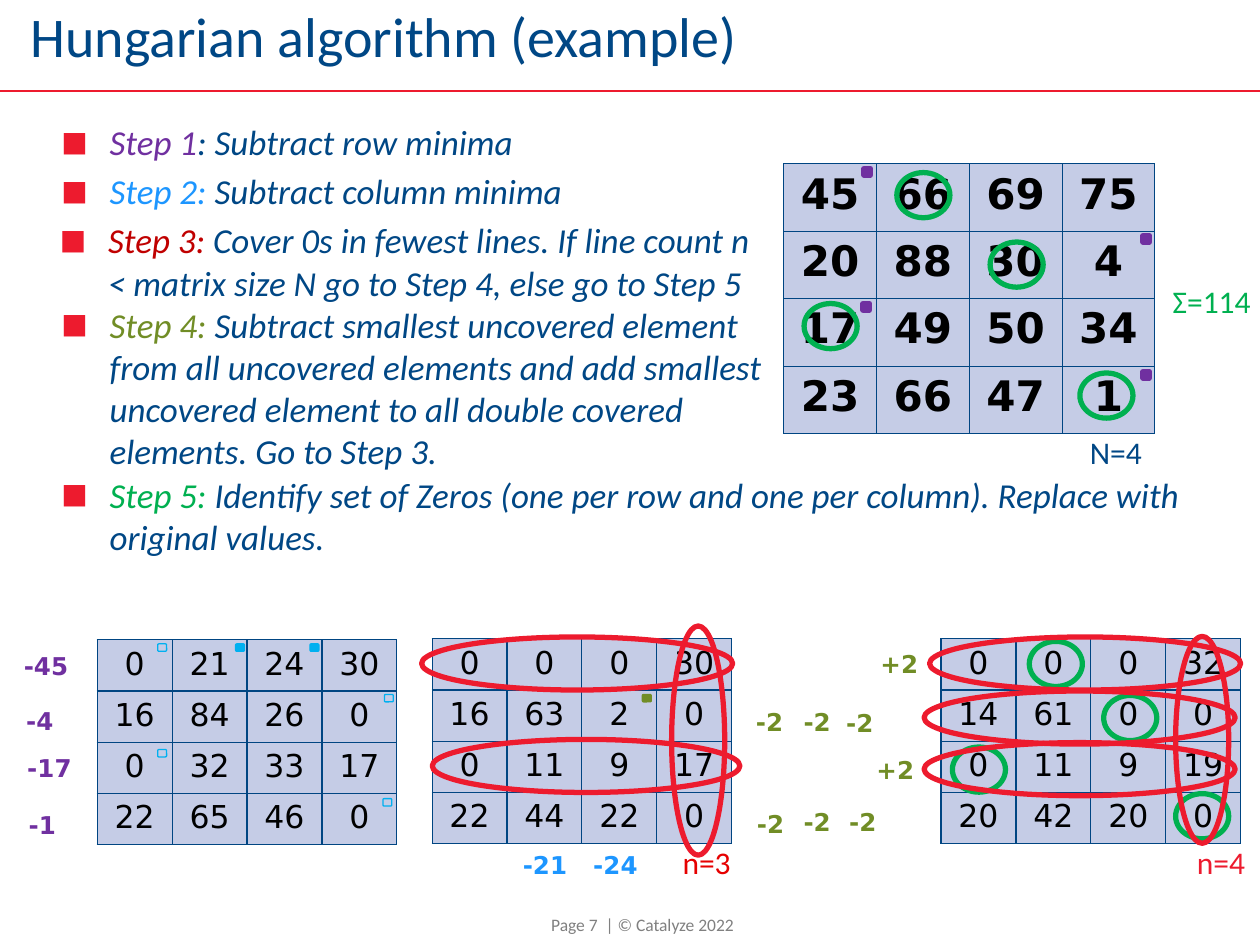
from lxml import etree
from pptx import Presentation
from pptx import util as u
from pptx.dml.color import RGBColor
from pptx.enum import shapes, text
from pptx.oxml import parse_xml
from pptx.oxml.ns import nsdecls, qn

NAVY, RED, GREEN, OLIVE = "004785", "ED1B2E", "00B050", "718D26"
PURPLE, BLUE, CYAN = "7030A0", "1D96FF", "00B0F0"
BORDER, CELL_FILL = "004582", "C5CCE6"


def color(value):
    return RGBColor.from_string(value)


class Board:
    """Style and drawing methods for the current slide."""
    body_font, number_font = "Calibri", "DejaVu Sans"

    def __init__(self, slide):
        self.slide = slide

    def run(self, paragraph, words, size, hue, font=None, bold=False, italic=False):
        run = paragraph.add_run()
        run.text = words
        run.font.name = font or self.body_font
        run.font.size = u.Pt(size)
        run.font.bold, run.font.italic = bold, italic
        run.font.color.rgb = color(hue)

    def title(self, words, x, y, w, h):
        title = self.slide.shapes.title
        title.left, title.top, title.width, title.height = map(u.Cm, (x, y, w, h))
        frame = title.text_frame
        frame.auto_size = text.MSO_AUTO_SIZE.NONE
        frame.vertical_anchor = text.MSO_ANCHOR.BOTTOM
        frame.paragraphs[0].alignment = text.PP_ALIGN.LEFT
        self.run(frame.paragraphs[0], words, 32, NAVY)

    def box(self, x, y, w, h, wrap=True):
        frame = self.slide.shapes.add_textbox(*map(u.Cm, (x, y, w, h))).text_frame
        frame.word_wrap = wrap
        return frame

    def note(self, words, x, y, w, h, hue, size=18, align=text.PP_ALIGN.LEFT):
        paragraph = self.box(x, y, w, h).paragraphs[0]
        paragraph.alignment = align
        self.run(paragraph, words, size, hue)

    def change(self, words, x, y, hue):
        frame = self.box(x, y, 1.4, 1.04, wrap=False)
        frame.vertical_anchor = text.MSO_ANCHOR.MIDDLE
        self.run(frame.paragraphs[0], words, 14, hue, self.number_font, bold=True)

    def step(self, name, words, hue, x, y, w, h):
        paragraph = self.box(x, y, w, h).paragraphs[0]
        props = paragraph._p.get_or_add_pPr()
        props.set("marL", str(u.Cm(1.96)))
        props.set("indent", str(u.Cm(-0.97)))
        bullet = etree.SubElement(props, qn("a:buClr"))
        etree.SubElement(bullet, qn("a:srgbClr"), val=RED)
        etree.SubElement(props, qn("a:buSzPct"), val="80000")
        etree.SubElement(props, qn("a:buFont"), typeface=self.body_font)
        etree.SubElement(props, qn("a:buChar"), char="■")
        self.run(paragraph, name, 20, hue, italic=True)
        self.run(paragraph, words, 20, NAVY, italic=True)

    def matrix(self, rows, x, y, col, row, size, bold=False):
        count = len(rows)
        table = self.slide.shapes.add_table(
            count, count, u.Cm(x), u.Cm(y), u.Cm(col * count), u.Cm(row * count)).table
        for i, values in enumerate(rows):
            table.rows[i].height = u.Cm(row)
            table.columns[i].width = u.Cm(col)
            for j, value in enumerate(values):
                cell = table.cell(i, j)
                self.border(cell)
                cell.fill.solid()
                cell.fill.fore_color.rgb = color(CELL_FILL)
                paragraph = cell.text_frame.paragraphs[0]
                paragraph.alignment = text.PP_ALIGN.CENTER
                self.run(paragraph, str(value), size, "000000", self.number_font, bold)

    def border(self, cell):
        props = cell._tc.get_or_add_tcPr()
        for side in ("lnL", "lnR", "lnT", "lnB"):
            props.append(parse_xml(
                f'<a:{side} {nsdecls("a")} w="{u.Pt(0.75)}"><a:solidFill>'
                f'<a:srgbClr val="{BORDER}"/></a:solidFill></a:{side}>'))

    def shape(self, kind, x, y, w, h, hue, weight, filled=False):
        shape = self.slide.shapes.add_shape(kind, *map(u.Cm, (x, y, w, h)))
        shape.shadow.inherit = False
        shape.line.color.rgb = color(hue)
        shape.line.width = u.Pt(weight)
        if filled:
            shape.fill.solid()
            shape.fill.fore_color.rgb = color(hue)
        else:
            shape.fill.background()
        return shape

    def ring(self, x, y, w=1.07, h=0.91, hue=GREEN, rotation=0):
        self.shape(shapes.MSO_SHAPE.OVAL, x, y, w, h, hue, 3).rotation = rotation

    def minimum(self, x, y):
        self.shape(shapes.MSO_SHAPE.RECTANGLE, x, y, 0.13, 0.13, PURPLE, 3, True)

    def mark(self, x, y, hue=CYAN, filled=False):
        self.shape(shapes.MSO_SHAPE.ROUNDED_RECTANGLE, x, y, 0.18, 0.15, hue, 0.75, filled)

    def rule(self, x1, y1, x2, y2):
        line = self.slide.shapes.add_connector(
            shapes.MSO_CONNECTOR.STRAIGHT, *map(u.Cm, (x1, y1, x2, y2)))
        line.line.color.rgb = color(RED)
        line.line.width = u.Pt(1)
        etree.SubElement(line._element.spPr, qn("a:effectLst"))


def main():
    deck = Presentation()
    deck.slide_width, deck.slide_height = u.Cm(25.4), u.Cm(19.05)
    board = Board(deck.slides.add_slide(deck.slide_layouts[5]))

    # Header and footer
    board.note("Page 7  | © Catalyze 2022", 9.83, 18.31, 5.21, 0.69, "808080", 10,
               text.PP_ALIGN.RIGHT)
    board.rule(0, 1.83, 25.4, 1.83)
    board.title("Hungarian algorithm (example)", 0.36, 0.15, 24.66, 1.37)

    # Steps of the algorithm
    for step in (
        ("Step 1", ": Subtract row minima", PURPLE, 0, 2.31, 11.53, 1.37),
        ("Step 2:", " Subtract column minima", BLUE, 0, 3.3, 12.57, 1.37),
        ("Step 3: ", "Cover 0s in fewest lines. If line count n < matrix size N "
         "go to Step 4, else go to Step 5", "C00000", -0.03, 4.29, 15.67, 2.69),
        ("Step 4: ", "Subtract smallest uncovered element from all uncovered elements "
         "and add smallest uncovered element to all double covered elements. "
         "Go to Step 3.", OLIVE, 0, 5.99, 16.03, 3.43),
        ("Step 5:", " Identify set of Zeros (one per row and one per column). "
         "Replace with original values.", GREEN, 0, 9.42, 25.43, 2.41),
    ):
        board.step(*step)

    # Cost matrix and its three reductions
    costs = [(45, 66, 69, 75), (20, 88, 30, 4), (17, 49, 50, 34), (23, 66, 47, 1)]
    board.matrix(costs, 15.8, 3.3, 1.87, 1.36, 24, bold=True)
    for x, y, rows in (
        (1.96, 12.9, [(0, 21, 24, 30), (16, 84, 26, 0), (0, 32, 33, 17), (22, 65, 46, 0)]),
        (8.71, 12.88, [(0, 0, 0, 30), (16, 63, 2, 0), (0, 11, 9, 17), (22, 44, 22, 0)]),
        (18.97, 12.88, [(0, 0, 0, 32), (14, 61, 0, 0), (0, 11, 9, 19), (20, 42, 20, 0)]),
    ):
        board.matrix(rows, x, y, 1.51, 1.03, 18)

    # Chosen zeros and the matching costs
    for x, y in ((19.2, 15.06), (23.7, 16), (20.75, 12.93), (22.25, 14.02),
                 (18.08, 3.48), (16.21, 6.12), (19.96, 4.88), (21.77, 7.52)):
        board.ring(x, y)

    # Covering lines over rows and columns
    for x, y, length in ((11.1, 10.24, 6.27), (11.28, 12.34, 6.2), (21.34, 10.24, 6.27),
                         (21.23, 11.33, 6.27), (21.23, 12.37, 6.27)):
        board.ring(x, y, h=length, hue=RED, rotation=270)
    for x, y, length in ((13.54, 12.62, 4.62), (23.7, 12.83, 4.17)):
        board.ring(x, y, h=length, hue=RED)

    # Counts and total
    for words, x, y, w, hue in (
        ("N=4", 21.72, 8.61, 1.73, NAVY), ("n=3", 13.51, 16.87, 1.73, "E60000"),
        ("n=4", 23.88, 16.87, 1.73, RED), ("Σ=114", 23.39, 5.56, 2.31, GREEN),
    ):
        board.note(words, x, y, w, 1.02, hue)

    # Amounts subtracted and added
    changes = {
        PURPLE: (("-45", 0.23, 12.9), ("-4", 0.28, 14), ("-17", 0.3, 14.96),
                 ("-1", 0.33, 16.1)),
        BLUE: (("-21", 10.29, 16.92), ("-24", 11.71, 16.92)),
        OLIVE: (("-2", 14.99, 14.02), ("-2", 15.95, 14.02), ("-2", 16.81, 14.05),
                ("-2", 15.01, 16.08), ("-2", 15.95, 16.05), ("-2", 16.87, 16.05),
                ("+2", 17.5, 12.85), ("+2", 17.42, 14.99)),
    }
    for hue, items in changes.items():
        for words, x, y in items:
            board.change(words, x, y, hue)

    # Marks on row, column and uncovered minima
    for x, y in ((17.42, 3.4), (23.04, 4.75), (23.04, 7.49), (17.4, 6.12)):
        board.minimum(x, y)
    for x in (4.75, 6.25):
        board.mark(x, 12.98, filled=True)
    for x, y in ((3.18, 12.98), (3.18, 15.11), (7.75, 14), (7.72, 16.1)):
        board.mark(x, y)
    board.mark(12.95, 14, OLIVE, filled=True)

    deck.save("out.pptx")


if __name__ == "__main__":
    main()
